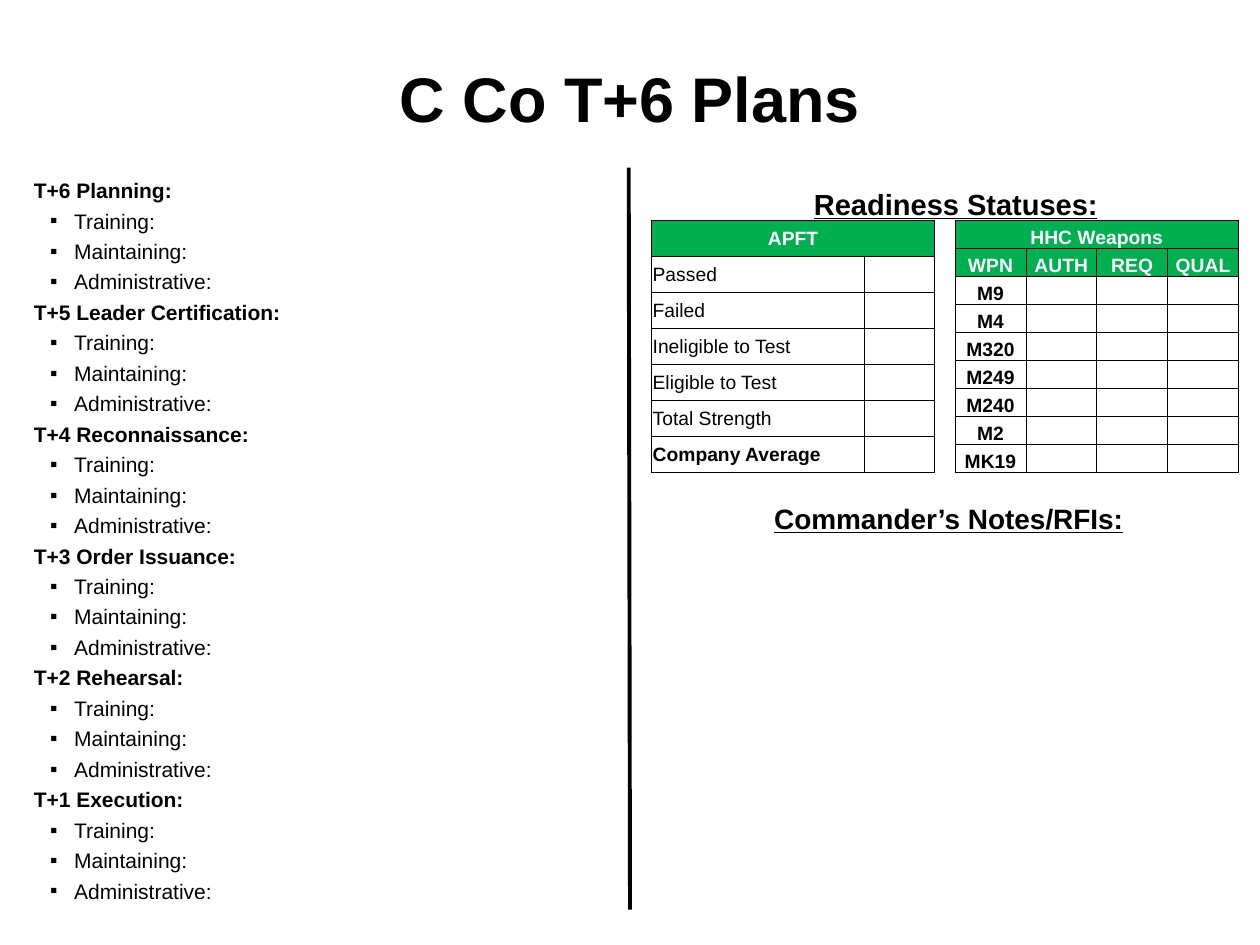
import pptx
import pptx.dml.color
import pptx.enum.shapes
import pptx.enum.text
import pptx.oxml
import pptx.oxml.ns
import pptx.util
from pptx.util import Inches

BLACK = pptx.dml.color.RGBColor(0x00, 0x00, 0x00)
WHITE = pptx.dml.color.RGBColor(0xFF, 0xFF, 0xFF)
GREEN = pptx.dml.color.RGBColor(0x00, 0xB0, 0x50)

ALIGN = pptx.enum.text.PP_ALIGN
ANCHOR = pptx.enum.text.MSO_ANCHOR
NS = pptx.oxml.ns.nsdecls("a")

PHASES = ["T+6 Planning:", "T+5 Leader Certification:", "T+4 Reconnaissance:",
          "T+3 Order Issuance:", "T+2 Rehearsal:", "T+1 Execution:"]
TASKS = ["Training:", "Maintaining:", "Administrative:"]
APFT_LABELS = ["Passed", "Failed", "Ineligible to Test", "Eligible to Test",
               "Total Strength", "Company Average"]
WEAPON_COLUMNS = ["WPN", "AUTH", "REQ", "QUAL"]
WEAPONS = ["M9", "M4", "M320", "M249", "M240", "M2", "MK19"]

TABLE_FONT_SIZE = 11
TABLE_TOP, TABLE_WIDTH, TABLE_HEIGHT = 1.75, 2.25, 2
CELL_FORMAT = {"margin_left": Inches(0.01), "margin_right": Inches(0.01),
               "margin_top": Inches(0.01), "margin_bottom": 0}


def set_all(target, values):
    for name, value in values.items():
        setattr(target, name, value)


def add_run(paragraph, text, size, color=BLACK, **font_format):
    run = paragraph.add_run()
    run.text = text
    set_all(run.font, {"name": "Arial", "size": pptx.util.Pt(size), **font_format})
    run.font.color.rgb = color


def add_text_frame(slide, left, top, width, height, anchor=ANCHOR.TOP):
    box = slide.shapes.add_textbox(Inches(left), Inches(top), Inches(width), Inches(height))
    set_all(box.text_frame, {"word_wrap": True, "vertical_anchor": anchor})
    return box.text_frame


def add_heading(slide, place, text, size, anchor=ANCHOR.TOP, **font_format):
    paragraph = add_text_frame(slide, *place, anchor).paragraphs[0]
    paragraph.alignment = ALIGN.CENTER
    add_run(paragraph, text, size, bold=True, **font_format)


def indent(paragraph, left, first, bullet=None):
    properties = paragraph._p.get_or_add_pPr()
    properties.set("marL", str(Inches(left)))
    properties.set("indent", str(Inches(first)))
    if bullet:
        properties.append(pptx.oxml.parse_xml(f'<a:buFont {NS} typeface="Arial"/>'))
        properties.append(pptx.oxml.parse_xml(f'<a:buChar {NS} char="{bullet}"/>'))


def add_phase_list(slide):
    frame = add_text_frame(slide, 0.17, 1.35, 4.75, 5.67)
    frame.margin_top = Inches(0.06)
    paragraph = frame.paragraphs[0]
    for phase in PHASES:
        for text in [phase, *TASKS]:
            if paragraph.runs:
                paragraph = frame.add_paragraph()
                paragraph.space_before = pptx.util.Pt(3)
            is_phase = text == phase
            if is_phase:
                indent(paragraph, 0.31, -0.31)
            else:
                indent(paragraph, 0.32, -0.19, "▪")
            add_run(paragraph, text, 12, bold=is_phase)


def add_divider(slide):
    divider = slide.shapes.add_connector(
        pptx.enum.shapes.MSO_CONNECTOR.STRAIGHT,
        Inches(4.99), Inches(1.33), Inches(5), Inches(7.22))
    divider.line.color.rgb = BLACK
    divider.line.width = pptx.util.Pt(2.25)
    divider._element.spPr.append(pptx.oxml.parse_xml(f"<a:effectLst {NS}/>"))


def add_borders(cell):
    properties = cell._tc.get_or_add_tcPr()
    for side in "LRTB":
        properties.append(pptx.oxml.parse_xml(
            f'<a:ln{side} {NS} w="{pptx.util.Pt(0.5)}"><a:solidFill>'
            f'<a:srgbClr val="{BLACK}"/></a:solidFill></a:ln{side}>'))


def add_grid(slide, left, column_widths, row_count):
    table = slide.shapes.add_table(
        row_count, len(column_widths), Inches(left), Inches(TABLE_TOP),
        Inches(TABLE_WIDTH), Inches(TABLE_HEIGHT)).table
    set_all(table, {"first_row": False, "horz_banding": False})
    for column, width in zip(table.columns, column_widths):
        column.width = Inches(width)
    for row in table.rows:
        row.height = Inches(TABLE_HEIGHT / row_count)
    for cell in table.iter_cells():
        set_all(cell, CELL_FORMAT)
        add_borders(cell)
        cell.fill.background()
        # Small end mark keeps empty cells from stretching their row
        cell.text_frame.paragraphs[0]._p.append(pptx.oxml.parse_xml(
            f'<a:endParaRPr {NS} sz="{TABLE_FONT_SIZE * 100}"/>'))
    return table


def fill_cell(cell, text, color=BLACK, bold=True, align=ALIGN.CENTER, anchor=ANCHOR.BOTTOM):
    cell.vertical_anchor = anchor
    paragraph = cell.text_frame.paragraphs[0]
    paragraph.alignment = align
    add_run(paragraph, text, TABLE_FONT_SIZE, color, bold=bold)


def fill_header(cell, text, anchor=ANCHOR.BOTTOM):
    cell.fill.solid()
    cell.fill.fore_color.rgb = GREEN
    fill_cell(cell, text, WHITE, anchor=anchor)


def add_apft_table(slide):
    apft = add_grid(slide, 5.17, [1.69, 0.56], len(APFT_LABELS) + 1)
    apft.cell(0, 0).merge(apft.cell(0, 1))
    fill_header(apft.cell(0, 0), "APFT", ANCHOR.MIDDLE)
    for row, label in enumerate(APFT_LABELS, 1):
        fill_cell(apft.cell(row, 0), label, bold=label == APFT_LABELS[-1],
                  align=ALIGN.LEFT, anchor=ANCHOR.MIDDLE)


def add_weapons_table(slide):
    column_count = len(WEAPON_COLUMNS)
    weapons = add_grid(slide, 7.58, [TABLE_WIDTH / column_count] * column_count,
                       len(WEAPONS) + 2)
    weapons.cell(0, 0).merge(weapons.cell(0, column_count - 1))
    fill_header(weapons.cell(0, 0), "HHC Weapons")
    for column, title in enumerate(WEAPON_COLUMNS):
        fill_header(weapons.cell(1, column), title)
    for row, weapon in enumerate(WEAPONS, 2):
        fill_cell(weapons.cell(row, 0), weapon)


def main():
    presentation = pptx.Presentation()
    set_all(presentation, {"slide_width": Inches(10), "slide_height": Inches(7.5)})
    slide = presentation.slides.add_slide(presentation.slide_layouts[6])

    # Title and divider
    add_heading(slide, (0.5, 0.3, 9, 0.95), "C Co T+6 Plans", 36, ANCHOR.MIDDLE)
    add_divider(slide)

    # Planning phases on the left
    add_phase_list(slide)

    # Readiness and notes on the right
    add_heading(slide, (5.25, 1.43, 4.67, 0.33), "Readiness Statuses:", 16.6, underline=True)
    add_apft_table(slide)
    add_weapons_table(slide)
    add_heading(slide, (5.23, 3.93, 4.6, 3.08), "Commander’s Notes/RFIs:", 16, underline=True)

    presentation.save("out.pptx")


if __name__ == "__main__":
    main()
